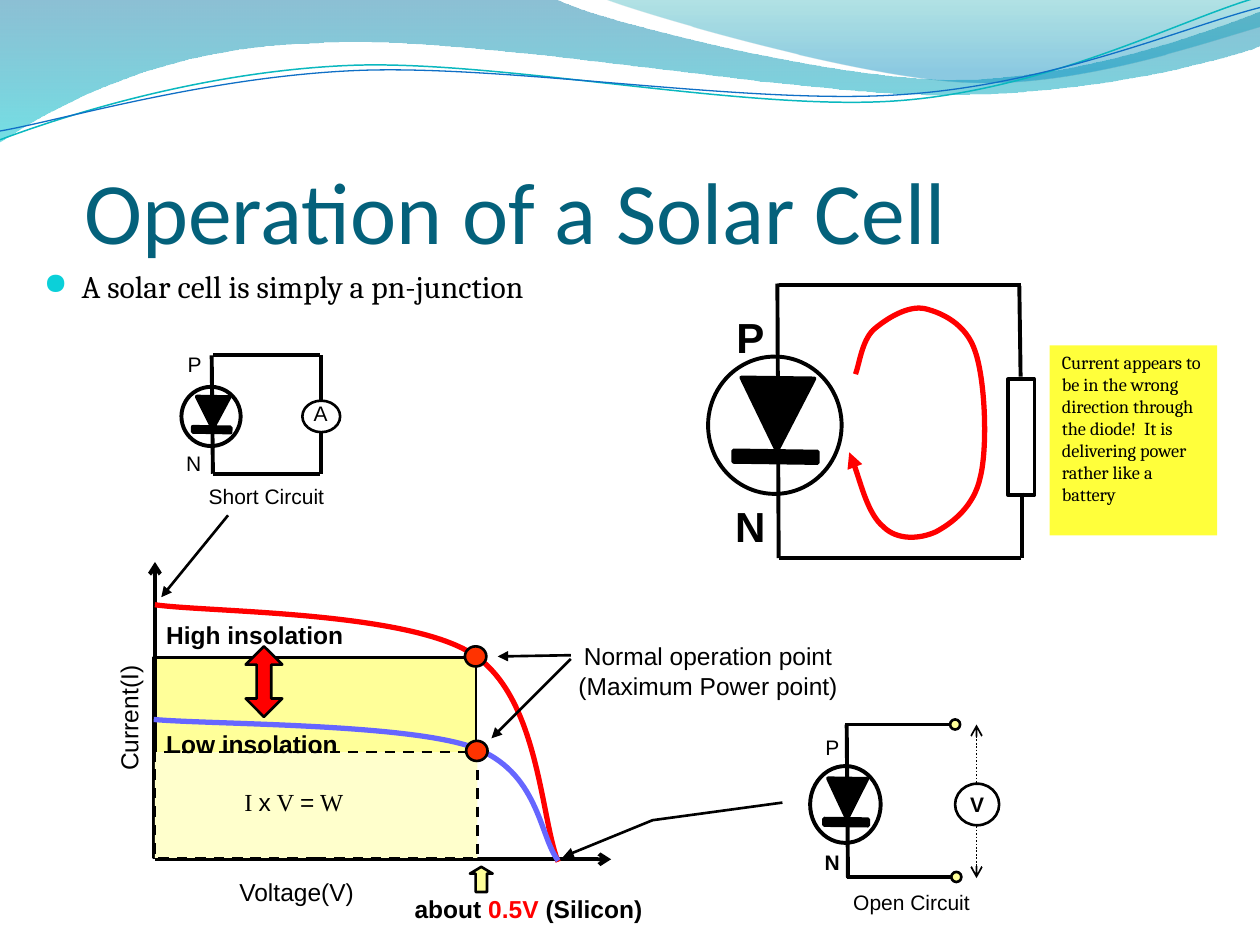
"""Build the solar cell operation slide with its circuits and I-V curves."""
from dataclasses import dataclass
from typing import Optional

from pptx import Presentation
from pptx.dml.color import RGBColor
from pptx.enum.dml import MSO_LINE_DASH_STYLE as Dash
from pptx.enum.shapes import MSO_CONNECTOR as Connector, MSO_SHAPE as Preset
from pptx.enum.text import MSO_ANCHOR as Anchor, PP_ALIGN as Align
from pptx.oxml.ns import qn
from pptx.oxml.xmlchemy import OxmlElement as make_element
from pptx.util import Pt

PX = 9144


@dataclass(frozen=True)
class Theme:
    black: str = "000000"
    white: str = "FFFFFF"
    title: str = "04617B"
    bullet: str = "0BD0D9"
    red: str = "FF0000"
    violet: str = "6666FF"
    marker: str = "FF3300"
    high_area: str = "FFFF99"
    low_area: str = "FFFFCC"
    note: str = "FFFF00"
    teal_line: str = "0AB8BF"
    blue_line: str = "0F6FC6"
    heading_font: str = "Calibri"
    body_font: str = "Cambria"
    label_font: str = "Arial"
    formula_font: str = "Times New Roman"
    title_size: float = 50
    body_size: float = 18
    terminal_size: float = 24
    chart_size: float = 14
    circuit_size: float = 12
    note_size: float = 10.5
    thin: float = 1.5
    thick: float = 2.25
    curve: float = 3


THEME = Theme()


@dataclass(frozen=True)
class Wire:
    start: tuple
    end: tuple
    weight: float = THEME.thick
    head: str = ""
    tail: str = ""
    dash: Optional[Dash] = None


@dataclass(frozen=True)
class Block:
    box: tuple
    preset: Preset = Preset.RECTANGLE
    fill: str = ""
    weight: float = THEME.thin
    dash: Optional[Dash] = None
    rotation: float = 0
    adjust: tuple = ()


@dataclass(frozen=True)
class Label:
    box: tuple
    pieces: tuple
    size: float = THEME.chart_size
    font: str = THEME.label_font
    bold: bool = False
    align: Align = Align.CENTER
    rotation: float = 0


@dataclass(frozen=True)
class Curve:
    start: tuple
    segments: tuple
    color: str = THEME.black
    weight: float = THEME.curve
    head: str = ""
    tail: str = ""
    gradient: tuple = ()


def emu(lengths: tuple) -> list:
    return [round(length * PX) for length in lengths]


def set_alpha(fill_owner, percents: tuple) -> None:
    for color, percent in zip(fill_owner.iter(qn("a:srgbClr")), percents):
        alpha = make_element("a:alpha")
        alpha.set("val", str(percent * 1000))
        color.append(alpha)


def style_line(line, color: str, weight: float, dash=None, head="", tail="") -> None:
    line.color.rgb = RGBColor.from_string(color)
    line.width = Pt(weight)
    if dash is not None:
        line.dash_style = dash
    for tag, kind in (("a:headEnd", head), ("a:tailEnd", tail)):
        if kind:
            arrow = make_element(tag)
            arrow.set("type", kind)
            line._get_or_add_ln().append(arrow)


def style_run(run, size: float, font: str, color: str, bold=False) -> None:
    run.font.size, run.font.name, run.font.bold = Pt(size), font, bold
    run.font.color.rgb = RGBColor.from_string(color)


def draw_wire(shapes, wire: Wire) -> None:
    connector = shapes.add_connector(Connector.STRAIGHT, *emu(wire.start + wire.end))
    style_line(connector.line, THEME.black, wire.weight, wire.dash, wire.head, wire.tail)
    connector._element.spPr.append(make_element("a:effectLst"))


def draw_block(shapes, block: Block) -> None:
    shape = shapes.add_shape(block.preset, *emu(block.box))
    shape.shadow.inherit = False
    shape.rotation = block.rotation
    for index, value in enumerate(block.adjust):
        shape.adjustments[index] = value
    if block.fill:
        shape.fill.solid()
        shape.fill.fore_color.rgb = RGBColor.from_string(block.fill)
    else:
        shape.fill.background()
    style_line(shape.line, THEME.black, block.weight, block.dash)


def draw_label(shapes, label: Label) -> None:
    holder = shapes.add_textbox(*emu(label.box))
    holder.rotation = label.rotation
    holder.text_frame.word_wrap = True
    paragraph = holder.text_frame.paragraphs[0]
    paragraph.alignment = label.align
    for piece in label.pieces:
        words, color, font = piece if isinstance(piece, tuple) else (piece, THEME.black, label.font)
        for index, part in enumerate(words.split("\n")):
            if index:
                paragraph.add_line_break()
            run = paragraph.add_run()
            run.text = part
            style_run(run, label.size, font, color, label.bold)


def draw_curve(shapes, curve: Curve) -> None:
    points = [seg[i:i + 2] for seg in curve.segments for i in range(0, len(seg), 2)]
    builder = shapes.build_freeform(*curve.start, scale=PX)
    builder.add_line_segments(points, close=bool(curve.gradient))
    shape = builder.convert_to_shape()
    shape.shadow.inherit = False
    outline = next(shape._element.iter(qn("a:path")))
    steps = iter(outline.findall(qn("a:lnTo")))
    for segment in curve.segments:
        group = [next(steps) for _ in range(len(segment) // 2)]
        if len(group) == 3:
            bezier = make_element("a:cubicBezTo")
            group[0].addprevious(bezier)
            for step in group:
                bezier.append(step[0])
                outline.remove(step)
    if not curve.gradient:
        shape.fill.background()
        style_line(shape.line, curve.color, curve.weight, None, curve.head, curve.tail)
        return
    shape.fill.gradient()
    shape.fill.gradient_angle = 270
    for stop, (position, color, _) in zip(shape.fill.gradient_stops, curve.gradient):
        stop.position, stop.color.rgb = position, RGBColor.from_string(color)
    set_alpha(shape._element, tuple(opacity for *_, opacity in curve.gradient))
    shape.line.fill.background()


DRAWERS = {Wire: draw_wire, Block: draw_block, Label: draw_label, Curve: draw_curve}


def diode(x: int, y: int, width: int, height: int) -> list:
    def inside(left, top, wide, tall):
        return (round(x + left * width), round(y + top * height), round(wide * width), round(tall * height))
    return [Block(inside(.25, .16, .55, .53), Preset.ISOSCELES_TRIANGLE, THEME.black, THEME.thick, rotation=180.8),
            Block(inside(.19, .69, .63, .08), fill=THEME.black, weight=THEME.thick, rotation=0.8),
            Block((x, y, width, height), Preset.OVAL, weight=THEME.thick, rotation=0.8)]


WAVES = [
    Curve((0, -1), ((440, -1), (476, 17, 664, 63, 758, 63), (853, 63, 958, 26, 1000, 9), (1001, 36),
                    (983, 44, 870, 76, 746, 75), (622, 75, 382, 28, 257, 34), (129, 36, 46, 83, -1, 113)),
          gradient=((0, "0074A1", 45), (1, "00C6CF", 55))),
    Curve((479, -1), ((509, 11, 682, 62, 769, 65), (856, 69, 961, 32, 1000, 21), (1000, 0)),
          gradient=((0, "00A1A9", 30), (.8, "008BBF", 45))),
    Curve((0, 111), ((48, 93, 158, 57, 277, 52), (395, 47, 593, 89, 713, 80), (833, 71, 938, 15, 998, -2)),
          THEME.teal_line, .85),
    Curve((0, 104), ((47, 96, 164, 61, 283, 56), (403, 51, 597, 84, 717, 75), (836, 67, 941, 21, 1000, 6)),
          THEME.blue_line, .75)]

LOADED_CIRCUIT = diode(562, 283, 106, 109) + [
    Wire((618, 443), (617, 225)), Wire((618, 443), (810, 443)), Wire((618, 226), (810, 226)),
    Wire((811, 391), (811, 443)), Wire((810, 299), (809, 227)),
    *(Label((562, top, 67, 50), (name,), THEME.terminal_size, bold=True) for name, top in (("P", 242), ("N", 392))),
    Curve((674, 359), ((679, 369, 689, 408, 701, 418), (712, 429, 730, 428, 743, 422), (756, 415, 773, 402, 778, 379),
                       (784, 355, 782, 302, 774, 279), (767, 257, 747, 248, 734, 245), (720, 242, 702, 254, 693, 262),
                       (684, 271, 682, 289, 679, 297)), THEME.red, head="triangle")]

IV_CHART = [
    Block((122, 522, 256, 159), fill=THEME.high_area),
    Wire((123, 682), (123, 446), tail="arrow"), Wire((123, 682), (485, 682), tail="arrow"),
    Label((131, 691, 209, 34), ("Voltage(V)",)), Label((2, 553, 201, 34), ("Current(I)",), rotation=270),
    Curve((123, 480), ((165, 486, 322, 485, 375, 519), (428, 553, 429, 649, 443, 684)), THEME.red),
    Curve((621, 637), ((518, 651), (447, 680)), weight=THEME.thin, tail="triangle"),
    Wire((181, 409), (128, 474), THEME.thin, tail="triangle"),
    Curve((122, 571), ((164, 575, 321, 574, 375, 593), (428, 612, 428, 664, 443, 683)), THEME.violet),
    Label((318, 705, 203, 34), ("about ", ("0.5V", THEME.red, THEME.label_font), " (Silicon)"), bold=True),
    Block((373, 688, 18, 20), Preset.UP_ARROW, THEME.high_area, adjust=(.5, .3)),
    Label((122, 487, 243, 34), ("High insolation",), bold=True, align=Align.LEFT),
    Block((123, 597, 256, 84), fill=THEME.low_area, dash=Dash.DASH),
    Label((122, 574, 243, 34), ("Low insolation",), bold=True, align=Align.LEFT),
    *(Block((left, top, 17, 16), Preset.OVAL, THEME.marker) for left, top in ((369, 513), (370, 588))),
    Label((442, 504, 240, 57), ("Normal operation point\n(Maximum Power point)",)),
    Wire((453, 520), (395, 521), THEME.thin, tail="triangle"),
    Wire((453, 523), (390, 586), THEME.thin, tail="triangle"),
    Label((184, 620, 141, 34), ("I ", ("x", THEME.black, THEME.label_font), " V ",
                                ("=", THEME.black, THEME.label_font), " W"),
          font=THEME.formula_font, align=Align.LEFT),
    Block((195, 513, 29, 56), Preset.UP_DOWN_ARROW, THEME.red, adjust=(.5, .4))]

SHORT_CIRCUIT = diode(144, 307, 47, 47) + [
    Wire((169, 376), (168, 282)), Wire((169, 376), (254, 376)), Wire((169, 282), (254, 282)),
    Wire((255, 282), (255, 376)), Block((240, 318, 30, 25), Preset.OVAL, THEME.white),
    *(Label(box, (name,), THEME.circuit_size) for name, box in (
        ("P", (139, 274, 30, 38)), ("N", (138, 353, 30, 38)), ("A", (239, 313, 26, 38)),
        ("Short Circuit", (131, 379, 161, 38))))]

OPEN_CIRCUIT = diode(643, 608, 56, 61) + [
    Wire((673, 697), (672, 575)), Wire((671, 575), (754, 575)), Wire((672, 696), (755, 696)),
    Wire((775, 575), (775, 697), 1, "arrow", "arrow", Dash.ROUND_DOT),
    Block((758, 622, 35, 33), Preset.OVAL, THEME.white),
    *(Block((left, top, 8, 8), Preset.OVAL, THEME.high_area) for left, top in ((754, 571), (755, 692))),
    *(Label(box, (name,), THEME.circuit_size, bold=bold) for name, box, bold in (
        ("P", (643, 578, 35, 31), False), ("N", (643, 669, 35, 31), True), ("V", (760, 623, 31, 31), True),
        ("Open Circuit", (628, 701, 191, 31), False)))]


def add_heading(shapes) -> None:
    title = shapes.add_textbox(*emu((67, 83, 900, 125))).text_frame
    title.word_wrap, title.vertical_anchor = True, Anchor.BOTTOM
    title.margin_left = title.margin_right = title.margin_bottom = 0
    title.text = "Operation of a Solar Cell"
    style_run(title.paragraphs[0].runs[0], THEME.title_size, THEME.heading_font, THEME.title)


def add_statement(shapes) -> None:
    statement = shapes.add_textbox(*emu((25, 207, 467, 201))).text_frame
    statement.word_wrap = True
    statement.text = "A solar cell is simply a pn-junction"
    paragraph = statement.paragraphs[0]
    properties = paragraph._p.get_or_add_pPr()
    properties.set("marL", str(30 * PX))
    properties.set("indent", str(-30 * PX))
    tint, size, mark = (make_element(tag) for tag in ("a:buClr", "a:buSzPct", "a:buChar"))
    color = make_element("a:srgbClr")
    color.set("val", THEME.bullet)
    tint.append(color)
    size.set("val", "95000")
    mark.set("char", "●")
    properties.extend((tint, size, mark))
    style_run(paragraph.runs[0], THEME.body_size, THEME.body_font, THEME.black)


def add_note(shapes) -> None:
    note = shapes.add_shape(Preset.RECTANGLE, *emu((833, 274, 133, 151)))
    note.shadow.inherit = False
    note.fill.solid()
    note.fill.fore_color.rgb = RGBColor.from_string(THEME.note)
    set_alpha(note._element.spPr, (77,))
    note.line.fill.background()
    frame = note.text_frame
    frame.word_wrap, frame.vertical_anchor = True, Anchor.TOP
    frame.text = ("Current appears to be in the wrong direction through the diode!  "
                  "It is delivering power rather like a battery")
    frame.paragraphs[0].alignment = Align.LEFT
    style_run(frame.paragraphs[0].runs[0], THEME.note_size, THEME.body_font, THEME.black)


def draw_all(shapes, elements: list) -> None:
    for element in elements:
        DRAWERS[type(element)](shapes, element)


def main() -> None:
    deck = Presentation()
    deck.slide_width, deck.slide_height = emu((1000, 750))
    shapes = deck.slides.add_slide(deck.slide_layouts[6]).shapes
    draw_all(shapes, WAVES)
    add_heading(shapes)
    add_statement(shapes)
    draw_all(shapes, LOADED_CIRCUIT + IV_CHART + SHORT_CIRCUIT + OPEN_CIRCUIT)
    add_note(shapes)
    draw_block(shapes, Block((800, 301, 21, 92), weight=2))
    deck.save("out.pptx")


if __name__ == "__main__":
    main()
